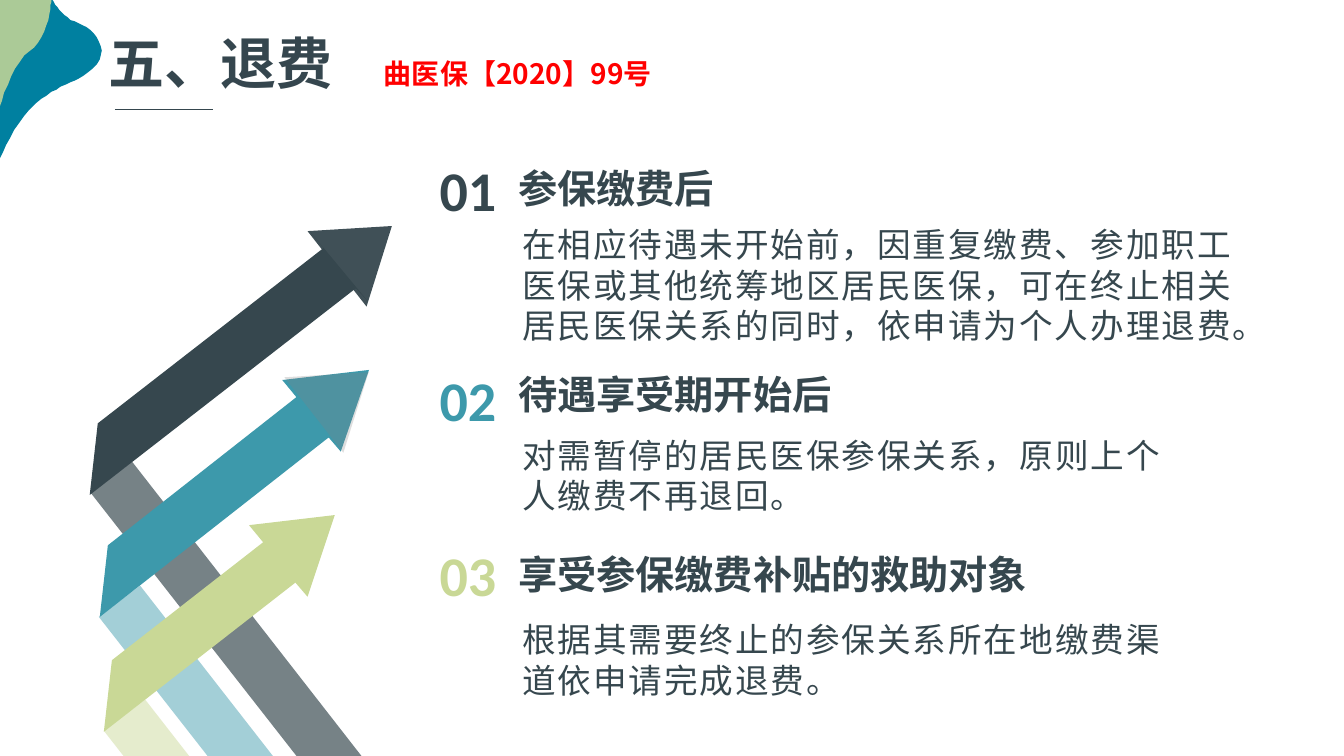
"""Build the refund slide: folded arrows on the left, three refund cases on the right."""
from lxml import etree
from pptx import Presentation, util as u
from pptx.dml.color import RGBColor
from pptx.enum import shapes, text
from pptx.oxml.ns import qn

PX = 9144
SANS = "Noto Sans CJK SC"
C = {"dark": "36474E", "title": "35464E", "teal": "3D99AB", "lime": "C9D896",
     "blue": "0080A0", "gray": "838082", "red": "FF0000"}


def paint(sp, color, opacity=100):
    sp.shadow.inherit = False
    sp.line.fill.background()
    sp.fill.solid()
    sp.fill.fore_color.rgb = RGBColor.from_string(C[color])
    if opacity < 100:
        clr = sp._element.spPr.find(qn("a:solidFill"))[0]
        etree.SubElement(clr, qn("a:alpha")).set("val", str(opacity * 1000))


def write(box, words, size, color, bold=True, font=SANS, spacing=0):
    tb = s.shapes.add_textbox(*[v * PX for v in box])
    tf = tb.text_frame
    tf.word_wrap = True
    tf.auto_size = text.MSO_AUTO_SIZE.SHAPE_TO_FIT_TEXT
    p = tf.paragraphs[0]
    p.add_run().text = words
    p.line_spacing = u.Pt(round(size * 1.21))
    p.font.size, p.font.bold, p.font.name = u.Pt(size), bold, font
    p.font.color.rgb = RGBColor.from_string(C[color])
    props = p._p.pPr.find(qn("a:defRPr"))
    props.set("spc", str(spacing))
    etree.SubElement(props, qn("a:ea")).set("typeface", font)
    return p


prs = Presentation()
prs.slide_width, prs.slide_height = 1333 * PX, 750 * PX
s = prs.slides.add_slide(prs.slide_layouts[6])

corners = [
    ("blue", 100, (-5, 0), (52, 0),
     [(52, 0, 61, 18, 78, 23), (95, 28, 111, 52, 92, 68),
      (73, 85, 58, 83, 35, 103), (12, 124, -5, 169, -5, 169)]),
    ("lime", 85, (-5, -1), (51, -1),
     [(51, -1, 49, 37, 29, 51), (9, 64, -5, 124, -5, 124)]),
]
for color, opacity, start, top, curves in corners:
    pts = [top]
    for x1, y1, x2, y2, x3, y3 in curves:
        x0, y0 = pts[-1]
        for i in range(1, 13):
            t = i / 12
            a, b, c, d = (1 - t) ** 3, 3 * t * (1 - t) ** 2, 3 * t * t * (1 - t), t ** 3
            pts.append((a * x0 + b * x1 + c * x2 + d * x3,
                        a * y0 + b * y1 + c * y2 + d * y3))
    fb = s.shapes.build_freeform(*start, scale=PX)
    fb.add_line_segments(pts)
    paint(fb.convert_to_shape(), color, opacity)

p = write((98, 23, 644, 77), "五、退费\t", 40, "title")
r = p.add_run()
r.text = "曲医保【2020】99号"
r.font.size = u.Pt(20)
r.font.color.rgb = RGBColor.from_string(C["red"])
tabs = etree.Element(qn("a:tabLst"))
etree.SubElement(tabs, qn("a:tab"), pos=str(273 * PX), algn="l")
p._p.pPr.find(qn("a:defRPr")).addprevious(tabs)

rule = s.shapes.add_connector(shapes.MSO_CONNECTOR.STRAIGHT,
                              114 * PX, 108 * PX, 211 * PX, 108 * PX)
rule.line.width = u.Pt(0.25)
rule.line.color.rgb = RGBColor.from_string(C["title"])
etree.SubElement(rule._element.spPr, qn("a:effectLst"))

tail = [(0, 0), (41, -31), (309, 313), (269, 344)]
arrows = [
    ("dark", 68, (90, 489),
     [(97, 420), (321, 246), (307, 229), (365, 299), (353, 286), (89, 491)]),
    ("teal", 47, (98, 612),
     [(107, 541), (294, 394), (280, 377), (366, 367), (338, 448), (326, 434), (99, 612)]),
    ("lime", 47, (103, 725),
     [(111, 655), (261, 538), (247, 521), (332, 511), (305, 592), (293, 578), (103, 726)]),
]
for color, opacity, (x, y), head in arrows:
    for pts, alpha in (([(x + dx, y + dy) for dx, dy in tail], opacity), (head, 100)):
        fb = s.shapes.build_freeform(*pts[0], scale=PX)
        fb.add_line_segments(pts[1:])
        paint(fb.convert_to_shape(), color, alpha)

for x, y, color, opacity in ((314, 211, "dark", 95), (291, 356, "gray", 26)):
    sp = s.shapes.add_shape(shapes.MSO_SHAPE.ISOSCELES_TRIANGLE,
                            x * PX, y * PX, 95 * PX, 69 * PX)
    sp.rotation = 52
    paint(sp, color, opacity)

cases = [
    ("dark", 149, 158, "参保缴费后", (508, 217, 733, 131),
     "在相应待遇未开始前，因重复缴费、参加职工医保或其他统筹地区居民医保，"
     "可在终止相关居民医保关系的同时，依申请为个人办理退费。"),
    ("teal", 358, 362, "待遇享受期开始后", (508, 426, 669, 91),
     "对需暂停的居民医保参保关系，原则上个人缴费不再退回。"),
    ("lime", 531, 541, "享受参保缴费补贴的救助对象", (508, 609, 669, 91),
     "根据其需要终止的参保关系所在地缴费渠道依申请完成退费。"),
]
for n, (color, num_y, head_y, heading, box, body) in enumerate(cases, 1):
    write(box, body, 24, "dark", bold=False, spacing=140)
    write((504, head_y, 702, 57), heading, 28, "dark")
    p = write((398, num_y, 104, 77), f"{n:02d}", 40, color, font="Calibri")
    p.alignment = text.PP_ALIGN.RIGHT

prs.save("out.pptx")
